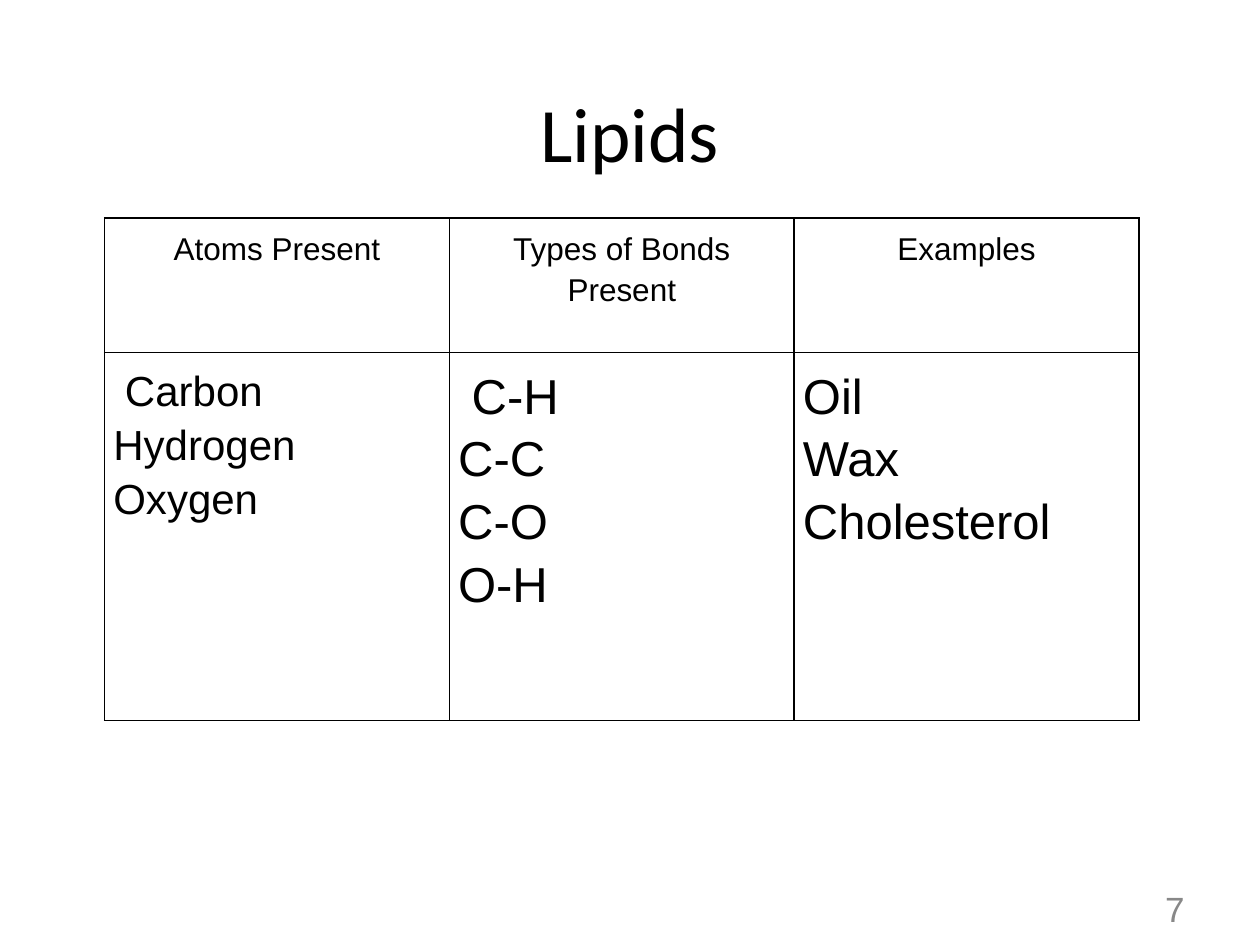
from lxml.etree import SubElement
from pptx import Presentation
from pptx.dml.color import RGBColor
from pptx.enum.text import MSO_ANCHOR, PP_ALIGN
from pptx.oxml.ns import qn
from pptx.util import Inches, Pt


def add_text(paragraph, text, size, font="Arial", color="000000", align=PP_ALIGN.LEFT):
    paragraph.alignment = align
    run = paragraph.add_run()
    run.text = text
    run.font.size = Pt(size)
    run.font.name = font
    run.font.color.rgb = RGBColor.from_string(color)


def add_borders(cell, color="000000", width=1):
    properties = cell._tc.get_or_add_tcPr()
    for side in ("a:lnL", "a:lnR", "a:lnT", "a:lnB"):
        line = SubElement(properties, qn(side), w=str(Pt(width)))
        fill = SubElement(line, qn("a:solidFill"))
        SubElement(fill, qn("a:srgbClr"), val=color)


presentation = Presentation()
presentation.slide_width = Inches(10)
presentation.slide_height = Inches(7.5)
slide = presentation.slides.add_slide(presentation.slide_layouts[5])

# Title
title = slide.shapes.title
title.left, title.top = Inches(0.5), Inches(0.5)
title.width, title.height = Inches(9), Inches(1.09)
title.text_frame.vertical_anchor = MSO_ANCHOR.MIDDLE
add_text(title.text_frame.paragraphs[0], "Lipids", 44, "Calibri", align=PP_ALIGN.CENTER)

# Slide number
page_number = slide.shapes.add_textbox(Inches(7.17), Inches(7.01), Inches(2.33), Inches(0.4))
page_number.text_frame.word_wrap = True
page_number.text_frame.vertical_anchor = MSO_ANCHOR.MIDDLE
add_text(page_number.text_frame.paragraphs[0], "7", 20, color="888888", align=PP_ALIGN.RIGHT)

# Table content: heading, size of the entries, entries
columns = [
    ("Atoms Present", 24, [" Carbon", "Hydrogen", "Oxygen"]),
    ("Types of Bonds Present", 28, [" C-H", "C-C", "C-O", "O-H"]),
    ("Examples", 28, ["Oil", "Wax", "Cholesterol"]),
]

# Table
lipid_table = slide.shapes.add_table(
    2, len(columns), Inches(0.83), Inches(1.73), Inches(8.21), Inches(3.99)
).table
lipid_table.first_row = False
lipid_table.horz_banding = False
lipid_table.rows[0].height = Inches(1.07)
lipid_table.rows[1].height = Inches(2.92)

for column, (heading, entry_size, entries) in enumerate(columns):
    lipid_table.columns[column].width = Inches(8.21 / len(columns))
    rows = [([heading], 18, PP_ALIGN.CENTER), (entries, entry_size, PP_ALIGN.LEFT)]
    for row, (lines, size, align) in enumerate(rows):
        cell = lipid_table.cell(row, column)
        cell.margin_left = cell.margin_right = Inches(0.07)
        cell.margin_top = cell.margin_bottom = Inches(0.07)
        add_borders(cell)
        cell.fill.background()
        for index, line in enumerate(lines):
            frame = cell.text_frame
            paragraph = frame.add_paragraph() if index else frame.paragraphs[0]
            paragraph.line_spacing = 1.15
            add_text(paragraph, line, size, align=align)

presentation.save("out.pptx")
